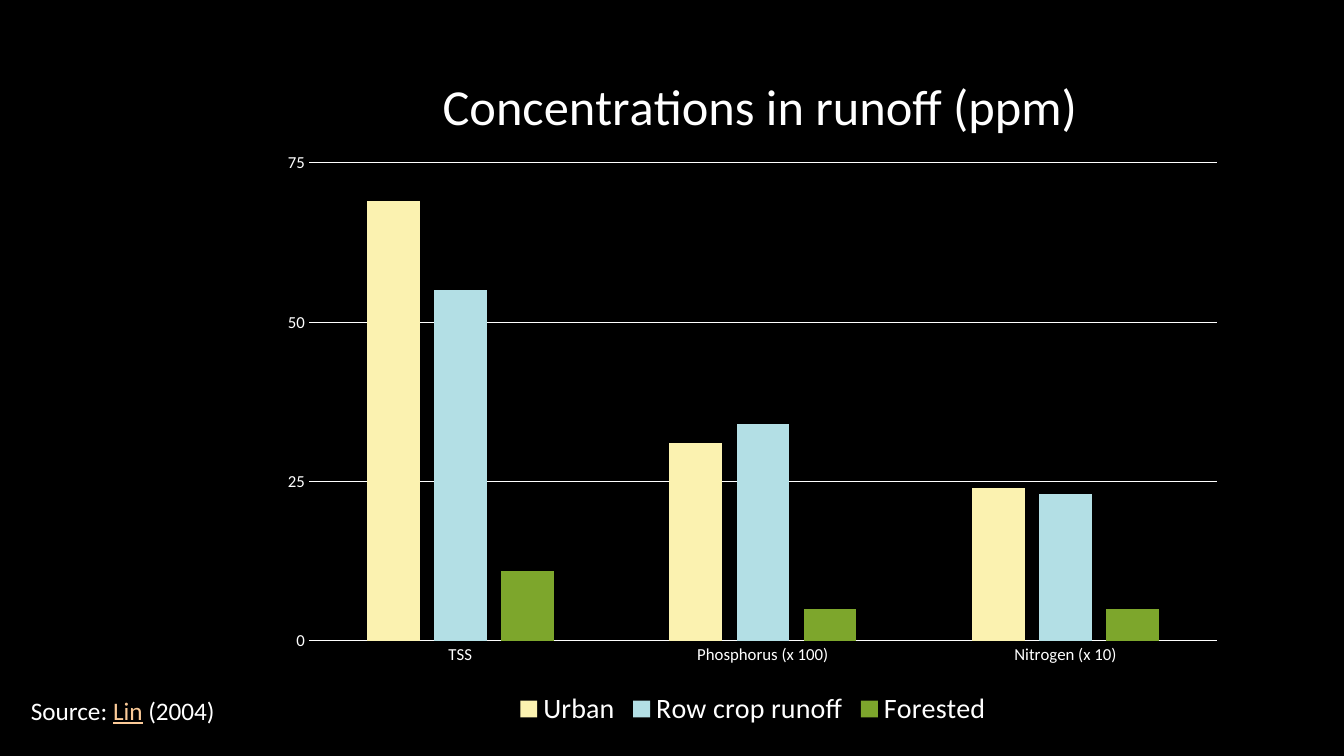
from dataclasses import dataclass

from lxml.etree import SubElement
from pptx import Presentation
from pptx.chart.data import CategoryChartData
from pptx.dml.color import RGBColor
from pptx.enum.chart import XL_CHART_TYPE, XL_LEGEND_POSITION, XL_TICK_MARK
from pptx.enum.text import MSO_AUTO_SIZE
from pptx.oxml import parse_xml
from pptx.oxml.ns import nsdecls, qn
from pptx.util import Emu, Pt

SCALE = 914400 / 100.8


def px(n):
    return Emu(round(n * SCALE))


@dataclass(frozen=True)
class Theme:
    face: str = "Calibri"
    back: str = "000000"
    ink: str = "FFFFFF"
    link: str = "FBCA98"
    bars: tuple = ("FBF2B0", "B3DFE5", "7DA62C")
    title: int = 36
    legend: int = 20
    note: int = 18
    axis: int = 12
    base: int = 10
    line: float = 0.75


class Deck:
    def __init__(self, theme):
        self.theme = theme
        self.prs = Presentation()
        self.prs.slide_width, self.prs.slide_height = px(1344), px(756)
        self.slide = self.prs.slides.add_slide(self.prs.slide_layouts[6])
        fill = self.slide.background.fill
        fill.solid()
        fill.fore_color.rgb = RGBColor.from_string(theme.back)

    def style(self, font, size, color=None):
        font.name, font.size, font.bold = self.theme.face, Pt(size), False
        font.color.rgb = RGBColor.from_string(color or self.theme.ink)

    def rule(self, line):
        line.width = Pt(self.theme.line)
        line.color.rgb = RGBColor.from_string(self.theme.ink)

    def place(self, node, index, **spots):
        """Pin a chart part at fractions of the chart's size."""
        for old in node.findall(qn("c:layout")):
            node.remove(old)
        layout = parse_xml(f"<c:layout {nsdecls('c')}><c:manualLayout/></c:layout>")
        for tag, val in spots.items():
            SubElement(layout[0], qn(f"c:{tag}")).set("val", str(val))
        node.insert(index, layout)

    def columns(self, box, title, cats, series):
        data = CategoryChartData()
        data.categories = cats
        for name, vals in series.items():
            data.add_series(name, vals)
        frame = self.slide.shapes.add_chart(
            XL_CHART_TYPE.COLUMN_CLUSTERED, *map(px, box), data)
        chart, theme = frame.chart, self.theme
        self.style(chart.font, theme.base)

        # Title
        chart.has_title = True
        head = chart.chart_title
        head.include_in_layout = False
        head.text_frame.text = title
        self.style(head.text_frame.paragraphs[0].runs[0].font, theme.title)
        self.place(head._element, 1, xMode="edge", yMode="edge", x=0.17, y=0.05)

        # Bars
        plot = chart.plots[0]
        plot.vary_by_categories = False
        plot.gap_width, plot.overlap = 219, -27
        for bar, color in zip(plot.series, theme.bars):
            bar.format.fill.solid()
            bar.format.fill.fore_color.rgb = RGBColor.from_string(color)
        area = chart._chartSpace.find(f".//{qn('c:plotArea')}")
        self.place(area, 0, layoutTarget="inner", xMode="edge", yMode="edge",
                   x=round(40 / 968, 4), y=round(136 / 705, 4),
                   w=round(908 / 968, 4), h=round(478 / 705, 4))

        # Axes
        for axis in (chart.category_axis, chart.value_axis):
            axis.major_tick_mark = axis.minor_tick_mark = XL_TICK_MARK.NONE
            self.style(axis.tick_labels.font, theme.axis)
        self.rule(chart.category_axis.format.line)
        scale = chart.value_axis
        scale.minimum_scale, scale.maximum_scale, scale.major_unit = 0, 75, 25
        scale.format.line.fill.background()
        scale.has_major_gridlines = True
        self.rule(scale.major_gridlines.format.line)

        # Legend
        chart.has_legend = True
        chart.legend.position = XL_LEGEND_POSITION.BOTTOM
        chart.legend.include_in_layout = False
        self.style(chart.legend.font, theme.legend)

    def note(self, box, parts):
        frame = self.slide.shapes.add_textbox(*map(px, box)).text_frame
        frame.word_wrap = True
        frame.auto_size = MSO_AUTO_SIZE.SHAPE_TO_FIT_TEXT
        for text, linked in parts:
            run = frame.paragraphs[0].add_run()
            run.text = text
            self.style(run.font, self.theme.note, self.theme.link if linked else None)
            run.font.underline = linked


def main():
    deck = Deck(Theme())

    # Runoff chart
    deck.columns(
        (269, 27, 968, 705), "Concentrations in runoff (ppm)",
        ("TSS", "Phosphorus (x 100)", "Nitrogen (x 10)"),
        {"Urban": (69, 31, 24),
         "Row crop runoff": (55, 34, 23),
         "Forested": (11, 5, 5)})

    # Source line
    deck.note((21, 690, 698, 40),
              (("Source: ", False), ("Lin", True), (" (2004)", False)))

    deck.prs.save("out.pptx")


if __name__ == "__main__":
    main()
